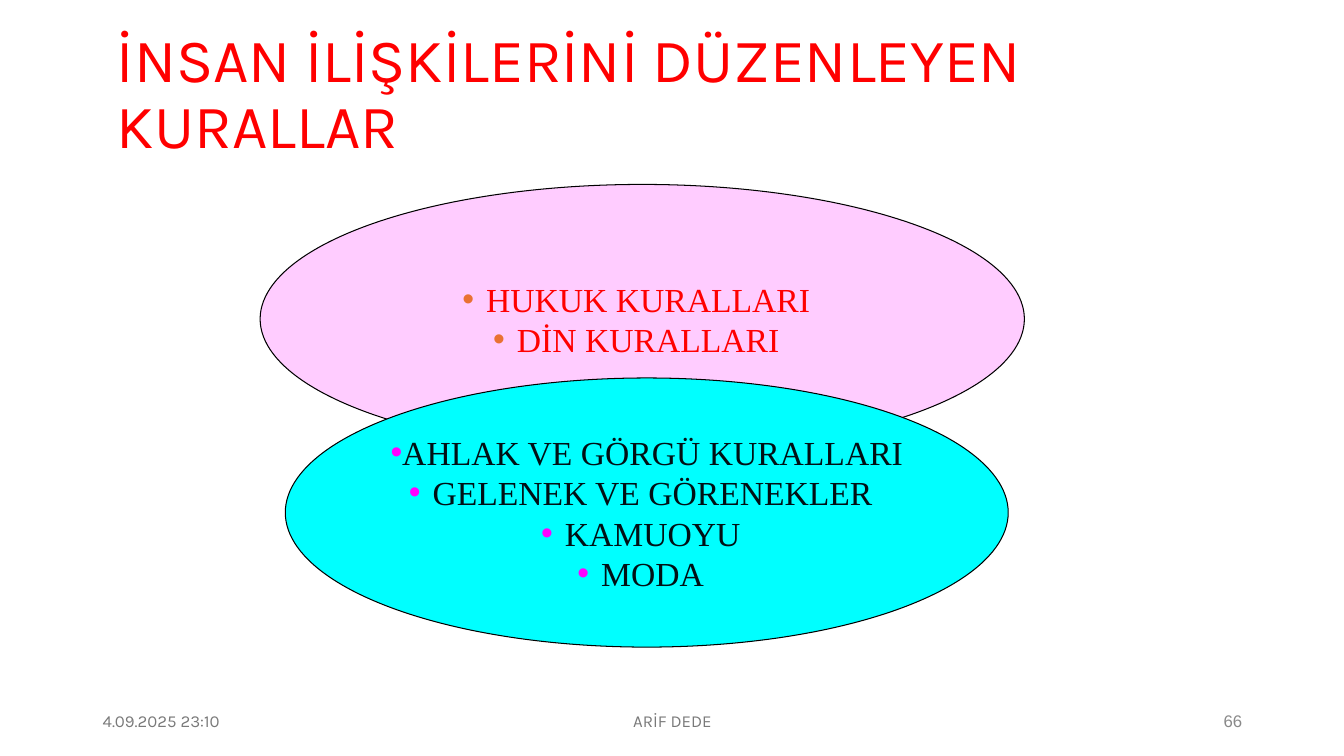
from lxml.etree import SubElement
from pptx import Presentation
from pptx.dml.color import RGBColor
from pptx.enum.shapes import MSO_SHAPE
from pptx.enum.text import MSO_ANCHOR, PP_ALIGN
from pptx.oxml.ns import qn
from pptx.util import Inches, Pt

COLORS = {"red": "FF0000", "pink": "FFCCFF", "cyan": "00FFFF", "black": "000000",
          "ink": "021015", "orange": "E97132", "magenta": "FF00FF",
          "gray": "797979", "light_gray": "898989"}


def color(name):
    return RGBColor.from_string(COLORS[name])


def write(shape, lines, font, size, ink, align, wrap=True):
    frame = shape.text_frame
    frame.word_wrap = wrap
    frame.vertical_anchor = MSO_ANCHOR.MIDDLE
    for index, line in enumerate(lines):
        para = frame.paragraphs[0] if index == 0 else frame.add_paragraph()
        para.alignment = align
        span = para.add_run()
        span.text = line
        for name, value in {"name": font, "size": Pt(size)}.items():
            setattr(span.font, name, value)
        span.font.color.rgb = color(ink)
    return frame.paragraphs


deck = Presentation()
deck.slide_width, deck.slide_height = Inches(13.33), Inches(7.5)
page = deck.slides.add_slide(deck.slide_layouts[6])

# Footer: date, author, page number
footers = [
    (0.92, 3, "4.09.2025 23:10", "Karla", "gray", PP_ALIGN.LEFT),
    (4.42, 4.5, "ARİF DEDE", "Karla", "gray", PP_ALIGN.CENTER),
    (9.42, 3, "66", "Arial", "light_gray", PP_ALIGN.RIGHT),
]
for left, width, text, font, ink, align in footers:
    box = page.shapes.add_textbox(Inches(left), Inches(6.95), Inches(width), Inches(0.4))
    write(box, [text], font, 12, ink, align)

# Overlapping ellipses with bulleted rules
ellipses = [
    (2.58, 1.83, 7.58, "pink", "red", "orange", ["HUKUK KURALLARI", "DİN KURALLARI"]),
    (2.83, 3.75, 7.17, "cyan", "ink", "magenta",
     ["AHLAK VE GÖRGÜ KURALLARI", "GELENEK VE GÖRENEKLER", "KAMUOYU", "MODA"]),
]
for left, top, width, fill, ink, bullet, rules in ellipses:
    ellipse = page.shapes.add_shape(MSO_SHAPE.OVAL, Inches(left), Inches(top),
                                    Inches(width), Inches(2.67))
    ellipse.shadow.inherit = False
    ellipse.fill.solid()
    ellipse.fill.fore_color.rgb = color(fill)
    ellipse.line.color.rgb = color("black")
    ellipse.line.width = Pt(0.75)
    for para in write(ellipse, rules, "Times New Roman", 24, ink, PP_ALIGN.CENTER, False):
        properties = para._p.get_or_add_pPr()
        bullet_color = SubElement(properties, qn("a:buClr"))
        SubElement(bullet_color, qn("a:srgbClr"), val=COLORS[bullet])
        SubElement(properties, qn("a:buFont"), typeface="Arial")
        SubElement(properties, qn("a:buChar"), char="•")

# Title
title = page.shapes.add_textbox(Inches(1.06), Inches(0.33), Inches(11.75), Inches(1.24))
for para in write(title, ["İNSAN İLİŞKİLERİNİ DÜZENLEYEN KURALLAR"], "Karla", 44, "red",
                  PP_ALIGN.LEFT):
    para.line_spacing = 0.9

deck.save("out.pptx")
